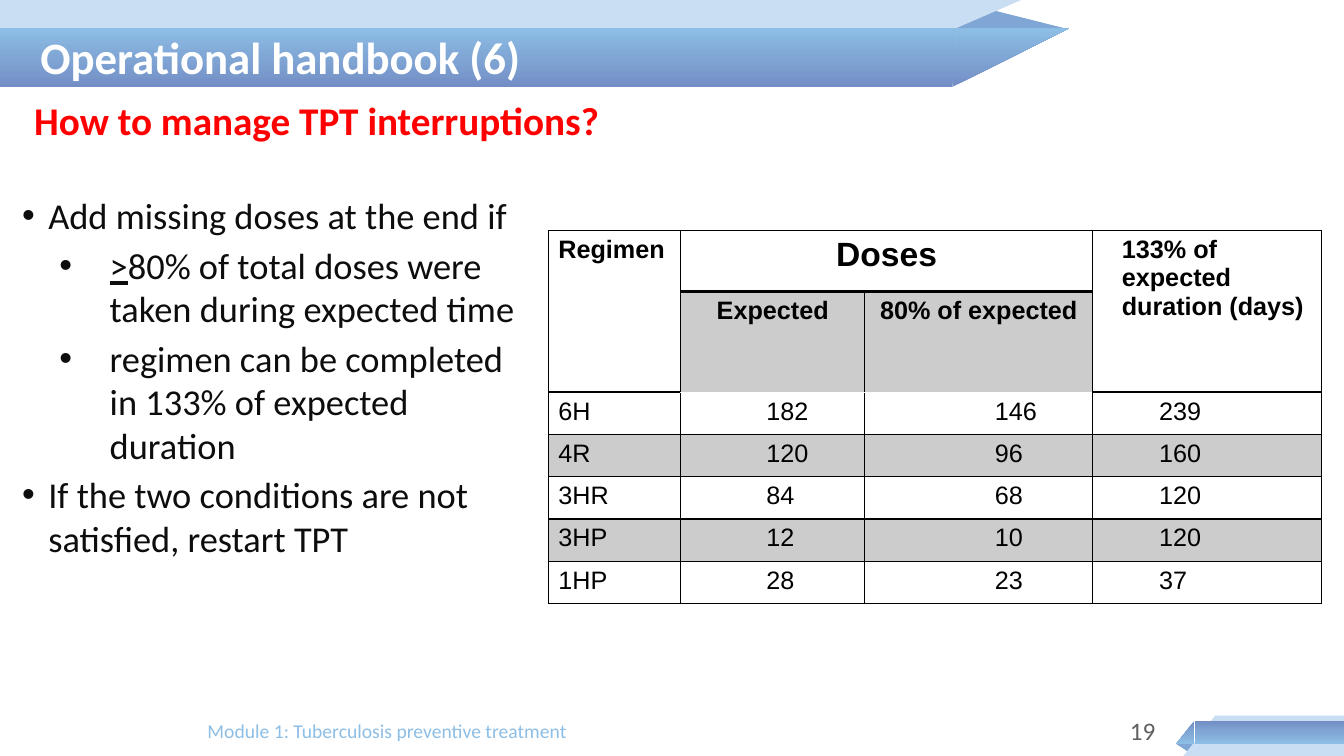
import pptx
import pptx.util
import pptx.dml.color
import pptx.enum.shapes
import pptx.enum.text
import pptx.oxml.ns
from lxml import etree

Pt = pptx.util.Pt
RGBColor = pptx.dml.color.RGBColor
SHAPE = pptx.enum.shapes.MSO_SHAPE
ALIGN = pptx.enum.text.PP_ALIGN
ANCHOR = pptx.enum.text.MSO_ANCHOR
qn = pptx.oxml.ns.qn

BLACK = RGBColor(0x00, 0x00, 0x00)
WHITE = RGBColor(0xFF, 0xFF, 0xFF)
RED = RGBColor(0xFF, 0x00, 0x00)
INK = RGBColor(0x0D, 0x0D, 0x0D)
GREY = RGBColor(0x60, 0x60, 0x60)
PALE = RGBColor(0xC9, 0xDD, 0xF3)
MID = RGBColor(0x80, 0xA6, 0xD5)
DEEP = RGBColor(0x73, 0x8E, 0xC5)
SKY = RGBColor(0x8D, 0xBE, 0xE6)

TITLE_FONT = {"name": "Calibri", "size": Pt(32), "bold": True}
HEADING_FONT = {"name": "Calibri", "size": Pt(28), "bold": True}
BODY_FONT = {"name": "Calibri", "size": Pt(26), "bold": False}
FOOTER_FONT = {"name": "Calibri", "size": Pt(14)}
NUMBER_FONT = {"name": "Calibri", "size": Pt(18)}
HEAD_FONT = {"name": "Arial", "size": Pt(18), "bold": True}
DOSES_FONT = {"name": "Arial", "size": Pt(24), "bold": True}
CELL_FONT = {"name": "Arial", "size": Pt(18), "bold": False}

HEADER_RIBBON = [
    (SHAPE.ISOSCELES_TRIANGLE, (679, 6.5, 84.2, 14.4), MID),
    (SHAPE.RECTANGLE, (0, 0, 586.8, 62), PALE),
    (SHAPE.RIGHT_TRIANGLE, (586.1, 0, 143.3, 62), PALE),
    (SHAPE.RECTANGLE, (0, 20.2, 680.4, 41.8), None),
    (SHAPE.RIGHT_TRIANGLE, (680.4, 20.2, 83.5, 41.8), None),
]
FOOTER_RIBBON = [
    (SHAPE.ISOSCELES_TRIANGLE, (840.2, 531.4, 13, 5.8), MID),
    (SHAPE.RECTANGLE, (868, 511.2, 92, 28.8), PALE),
    (SHAPE.RIGHT_TRIANGLE, (845.3, 511.2, 22.7, 28.8), PALE),
    (SHAPE.RECTANGLE, (853.2, 514.8, 106.8, 16.6), None),
    (SHAPE.RIGHT_TRIANGLE, (840.2, 514.8, 13, 16.6), None),
]

BULLETS = [
    (0, [("Add missing doses at the end if", False)]),
    (1, [(">", True),
         ("80% of total doses were taken during expected time", False)]),
    (1, [("regimen can be completed in 133% of expected duration", False)]),
    (0, [("If the two conditions are not satisfied, restart TPT", False)]),
]
BULLET_INDENTS = [(18.7, -18.7), (62.6, -36)]

COLUMNS = [94.5, 131.6, 162.7, 163.4]
ROWS = [43.2, 72] + [30.2] * 5
NUMBER_INDENTS = [0, 54, 85.7, 40.3]
REGIMENS = [
    ("6H", "182", "146", "239"),
    ("4R", "120", "96", "160"),
    ("3HR", "84", "68", "120"),
    ("3HP", "12", "10", "120"),
    ("1HP", "28", "23", "37"),
]


def apply(obj, fmt):
    for name, value in fmt.items():
        setattr(obj, name, value)


def place(sp, box):
    names = ("left", "top", "width", "height")
    apply(sp, {name: Pt(value) for name, value in zip(names, box)})


def add_run(p, text, fmt, color):
    r = p.add_run()
    r.text = text
    apply(r.font, fmt)
    r.font.color.rgb = color
    return r


def set_indent(p, left, first=0):
    pPr = p._p.get_or_add_pPr()
    pPr.set("marL", str(Pt(left)))
    pPr.set("indent", str(Pt(first)))
    return pPr


def set_frame(tf, anchor):
    apply(tf, {"word_wrap": True, "vertical_anchor": anchor,
               "auto_size": pptx.enum.text.MSO_AUTO_SIZE.NONE})


def fill_gradient(sp):
    sp.fill.gradient()
    sp.fill.gradient_angle = 270
    stops = sp._element.spPr.find(qn("a:gradFill")).find(qn("a:gsLst"))
    for stop in list(stops):
        stops.remove(stop)
    for position, color in ((0, DEEP), (50000, MID), (100000, SKY)):
        stop = etree.SubElement(stops, qn("a:gs"), pos=str(position))
        etree.SubElement(stop, qn("a:srgbClr"), val=str(color))


def add_ribbon(s, parts, flip, fold_flips):
    for kind, box, color in parts:
        sp = s.shapes.add_shape(kind, *map(Pt, box))
        sp.shadow.inherit = False
        sp.line.fill.background()
        if color is None:
            fill_gradient(sp)
        else:
            sp.fill.solid()
            sp.fill.fore_color.rgb = color
        xfrm = sp._element.spPr.find(qn("a:xfrm"))
        if kind == SHAPE.ISOSCELES_TRIANGLE:
            sp.adjustments[0] = 0.32
            flips = fold_flips
        else:
            sp.rotation = 180
            flips = (flip,)
        for name in flips:
            xfrm.set(name, "1")


def add_text(s, text, box, fmt, color, anchor, align=ALIGN.LEFT):
    sp = s.shapes.add_textbox(*map(Pt, box))
    set_frame(sp.text_frame, anchor)
    p = sp.text_frame.paragraphs[0]
    p.alignment = align
    add_run(p, text, fmt, color)


def fill_title(sp, text):
    place(sp, (21.6, 17.3, 633.6, 46))
    set_frame(sp.text_frame, ANCHOR.MIDDLE)
    p = sp.text_frame.paragraphs[0]
    p.alignment = ALIGN.LEFT
    add_run(p, text, TITLE_FONT, WHITE)


def fill_bullets(sp):
    place(sp, (8.6, 134.6, 371.5, 271.4))
    tf = sp.text_frame
    set_frame(tf, ANCHOR.TOP)
    for i, (level, runs) in enumerate(BULLETS):
        p = tf.add_paragraph() if i else tf.paragraphs[0]
        apply(p, {"level": level, "space_before": Pt(0), "space_after": Pt(4)})
        pPr = set_indent(p, *BULLET_INDENTS[level])
        etree.SubElement(pPr, qn("a:buFont"), typeface="Arial")
        etree.SubElement(pPr, qn("a:buChar"), char="•")
        for text, underline in runs:
            add_run(p, text, {**BODY_FONT, "underline": underline}, INK)


def set_borders(cell, widths):
    tcPr = cell._tc.get_or_add_tcPr()
    for side, width in widths.items():
        ln = etree.SubElement(tcPr, qn("a:ln" + side), w=str(Pt(width)))
        fill = etree.SubElement(ln, qn("a:solidFill"))
        etree.SubElement(fill, qn("a:srgbClr"), val=str(BLACK))


def shade(cell, shaded):
    if not shaded:
        cell.fill.background()
        return
    cell.fill.solid()
    cell.fill.fore_color.rgb = BLACK
    color = cell._tc.tcPr.find(qn("a:solidFill"))[0]
    etree.SubElement(color, qn("a:alpha"), val="20000")


def write_cell(cell, text, fmt, indent=0, align=ALIGN.LEFT):
    p = cell.text_frame.paragraphs[0]
    p.alignment = align
    set_indent(p, indent)
    add_run(p, text, fmt, BLACK)


def add_dose_table(s):
    frame = s.shapes.add_table(len(ROWS), len(COLUMNS), Pt(391.7), Pt(164.9),
                               Pt(sum(COLUMNS)), Pt(sum(ROWS)))
    table = frame.table
    apply(table, {"first_row": False, "horz_banding": False})
    for column, width in zip(table.columns, COLUMNS):
        column.width = Pt(width)
    for i, height in enumerate(ROWS):
        table.rows[i].height = Pt(height)
        for j in range(len(COLUMNS)):
            cell = table.cell(i, j)
            heavy = i == 0 or (i == 1 and j in (0, 3))
            widths = {"L": 1, "R": 1, "T": 1, "B": 2 if heavy else 1}
            if i in (1, 2):
                del widths["T"]
            set_borders(cell, widths)
            shade(cell, i % 2 == 1)
    for first, last in (((0, 0), (1, 0)), ((0, 1), (0, 2)), ((0, 3), (1, 3))):
        table.cell(*first).merge(table.cell(*last))
    write_cell(table.cell(0, 0), "Regimen", HEAD_FONT)
    write_cell(table.cell(0, 1), "Doses", DOSES_FONT, align=ALIGN.CENTER)
    write_cell(table.cell(0, 3), "133% of expected duration (days)", HEAD_FONT, 13.7)
    for j, text in enumerate(("Expected", "80% of expected"), 1):
        write_cell(table.cell(1, j), text, HEAD_FONT, align=ALIGN.CENTER)
    for i, values in enumerate(REGIMENS, 2):
        for j, (text, indent) in enumerate(zip(values, NUMBER_INDENTS)):
            write_cell(table.cell(i, j), text, CELL_FONT, indent)


def main():
    prs = pptx.Presentation()
    apply(prs, {"slide_width": Pt(960), "slide_height": Pt(540)})
    s = prs.slides.add_slide(prs.slide_layouts[1])
    title, body = s.placeholders
    add_ribbon(s, HEADER_RIBBON, "flipH", ())
    add_ribbon(s, FOOTER_RIBBON, "flipV", ("flipH", "flipV"))
    add_text(s, "19", (729.4, 507.6, 103, 28.8), NUMBER_FONT, GREY,
             ANCHOR.MIDDLE, ALIGN.RIGHT)
    add_text(s, "Module 1: Tuberculosis preventive treatment",
             (141.1, 507.6, 577.4, 28.8), FOOTER_FONT, SKY, ANCHOR.MIDDLE)
    add_text(s, "How to manage TPT interruptions?", (17.3, 65.5, 690.5, 41),
             HEADING_FONT, RED, ANCHOR.TOP)
    fill_bullets(body)
    add_dose_table(s)
    fill_title(title, "Operational handbook (6)")
    title._element.getparent().append(title._element)
    prs.save("out.pptx")


if __name__ == "__main__":
    main()
